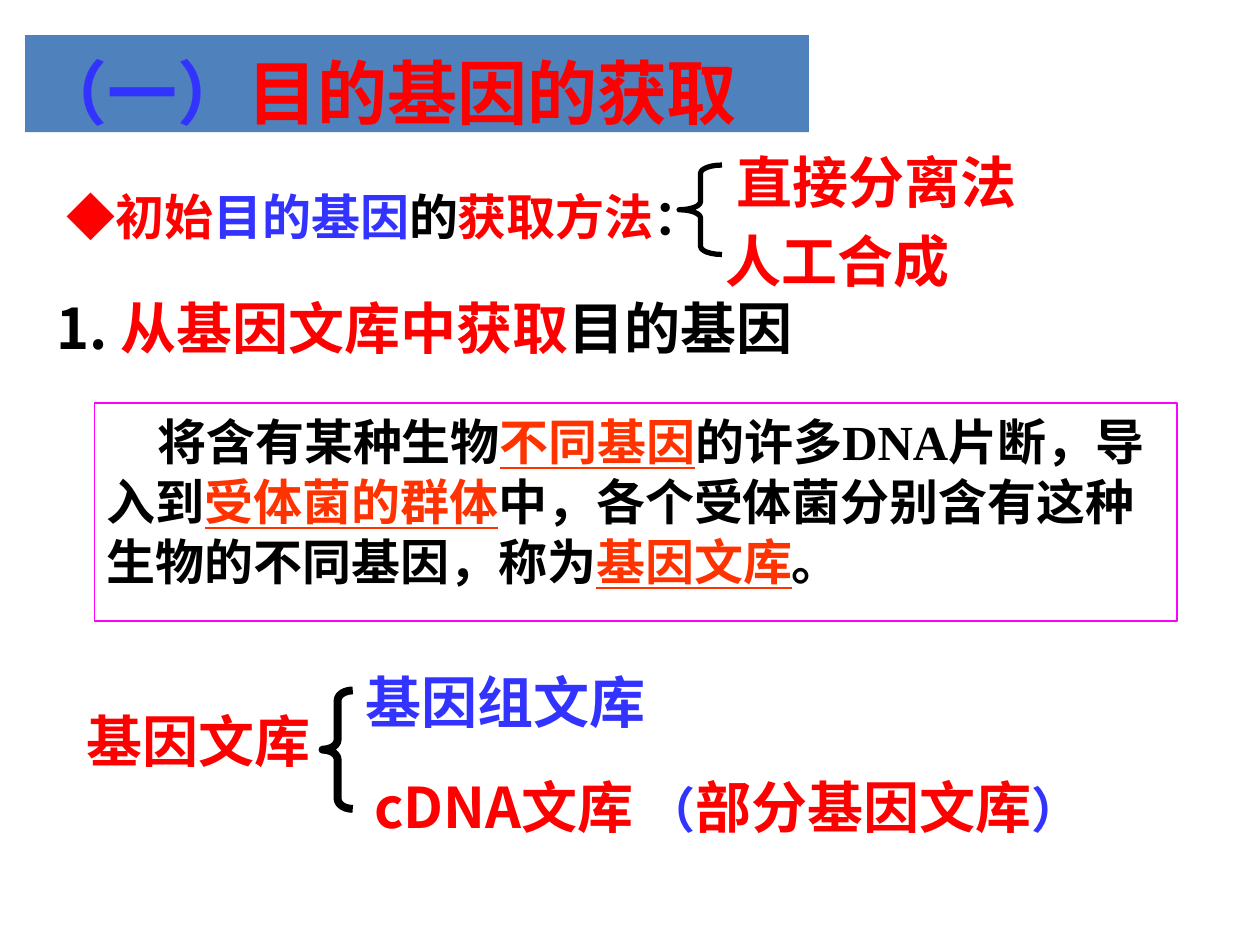
from lxml import etree
from pptx import Presentation
from pptx.dml.color import RGBColor
from pptx.enum.shapes import MSO_SHAPE
from pptx.enum.text import MSO_ANCHOR, PP_ALIGN
from pptx.oxml.ns import qn
from pptx.util import Inches, Pt

RED, BLUE, BLACK, ORANGE = "FF0000", "3333FF", "000000", "FF3300"
CAL, TIMES, NOTO = "Calibri", "Times New Roman", "Noto Sans CJK SC"


def color(code):
    return RGBColor.from_string(code)


def write(shape, runs, lead, top, before=0, left=0, first=0):
    """Fill a shape with one paragraph of (text, size, font, colour) runs."""
    frame = shape.text_frame
    layout = {"word_wrap": True, "vertical_anchor": MSO_ANCHOR.TOP,
              "margin_top": Inches(top), "margin_bottom": 0}
    for key, value in layout.items():
        setattr(frame, key, value)
    para = frame.paragraphs[0]
    style = {"alignment": PP_ALIGN.LEFT, "line_spacing": Pt(lead),
             "space_before": Pt(before)}
    for key, value in style.items():
        setattr(para, key, value)
    props = para._p.get_or_add_pPr()
    props.set("marL", str(Inches(left)))
    props.set("indent", str(Inches(first)))
    for text, size, face, code in runs:
        run = para.add_run()
        run.text = text
        look = {"size": Pt(size), "name": face, "bold": True,
                "underline": code == ORANGE}
        for key, value in look.items():
            setattr(run.font, key, value)
        run.font.color.rgb = color(code)
        # East Asian glyphs
        asian = etree.SubElement(run.font._element, qn("a:ea"))
        asian.set("typeface", NOTO)


deck = Presentation()
deck.slide_width, deck.slide_height = Inches(10), Inches(7.5)
slide = deck.slides.add_slide(deck.slide_layouts[6])
shapes = slide.shapes

# Title bar and definition box
panels = [
    ((0.2, 0.28, 6.22, 0.77), "4F81BD", None,
     [("（一）", 40, CAL, BLUE), ("目的基因的获取", 40, CAL, RED)],
     {"lead": 48, "top": 0.11}),
    ((0.75, 3.2, 8.59, 1.73), "FFFFFF", "FF00FF",
     [("将含有某种生物", 28, TIMES, BLACK),
      ("不同基因", 28, TIMES, ORANGE),
      ("的许多DNA片断，导入到", 28, TIMES, BLACK),
      ("受体菌的群体", 28, TIMES, ORANGE),
      ("中，各个受体菌分别含有这种生物的不同基因，称为", 28, TIMES, BLACK),
      ("基因文库", 28, TIMES, ORANGE),
      ("。", 28, TIMES, BLACK)],
     {"lead": 34.2, "top": 0.06, "before": 6, "first": 0.4}),
]
for place, fill, edge, runs, style in panels:
    panel = shapes.add_shape(MSO_SHAPE.RECTANGLE, *map(Inches, place))
    panel.shadow.inherit = False
    panel.fill.solid()
    panel.fill.fore_color.rgb = color(fill)
    if edge:
        panel.line.color.rgb = color(edge)
        panel.line.width = Pt(1)
    else:
        panel.line.fill.background()
    write(panel, runs, **style)

# Text lines
lines = [
    ((0.43, 1.39, 5.51, 0.57),
     [("◆", 28, CAL, RED), ("初始", 28, TIMES, RED),
      ("目的基因", 28, TIMES, BLUE), ("的", 28, TIMES, BLACK),
      ("获取方法", 28, TIMES, RED), ("：", 28, TIMES, BLACK)],
     {"lead": 34.2, "top": 0.08}),
    ((5.75, 1.07, 2.72, 0.63), [("直接分离法", 32, CAL, RED)],
     {"lead": 38.4, "top": 0.1}),
    ((5.66, 1.7, 2.38, 0.63), [("人工合成", 32, CAL, RED)],
     {"lead": 38.4, "top": 0.1}),
    ((0.35, 2.33, 6.22, 0.58),
     [("1.", 32, NOTO, BLACK), (" ", 28, TIMES, BLACK),
      ("从基因文库中获取", 32, TIMES, RED), ("目的基因", 32, TIMES, BLACK)],
     {"lead": 38.4, "top": 0, "before": 6.4, "left": 0.38, "first": -0.38}),
    ((0.59, 5.4, 2.2, 0.77), [("基因文库", 32, TIMES, RED)],
     {"lead": 38.4, "top": 0.21}),
    ((2.8, 5.09, 2.84, 0.77), [("基因组文库", 32, TIMES, BLUE)],
     {"lead": 38.4, "top": 0.21}),
    ((2.87, 6.03, 5.91, 0.63),
     [("cDNA文库 ", 32, NOTO, RED), ("（", 28, TIMES, BLUE),
      ("部分基因文库", 32, TIMES, RED), ("）", 28, TIMES, BLUE)],
     {"lead": 38.4, "top": 0.1}),
]
for place, runs, style in lines:
    write(shapes.add_textbox(*map(Inches, place)), runs, **style)

# Braces
for place, curve, width in [((5.39, 1.31, 0.34, 0.71), 0.19, 3),
                            ((2.56, 5.48, 0.24, 0.94), 0.33, 4.5)]:
    brace = shapes.add_shape(MSO_SHAPE.LEFT_BRACE, *map(Inches, place))
    brace.shadow.inherit = False
    brace.adjustments[0] = curve
    brace.fill.background()
    brace.line.color.rgb = color(BLACK)
    brace.line.width = Pt(width)

deck.save("out.pptx")
